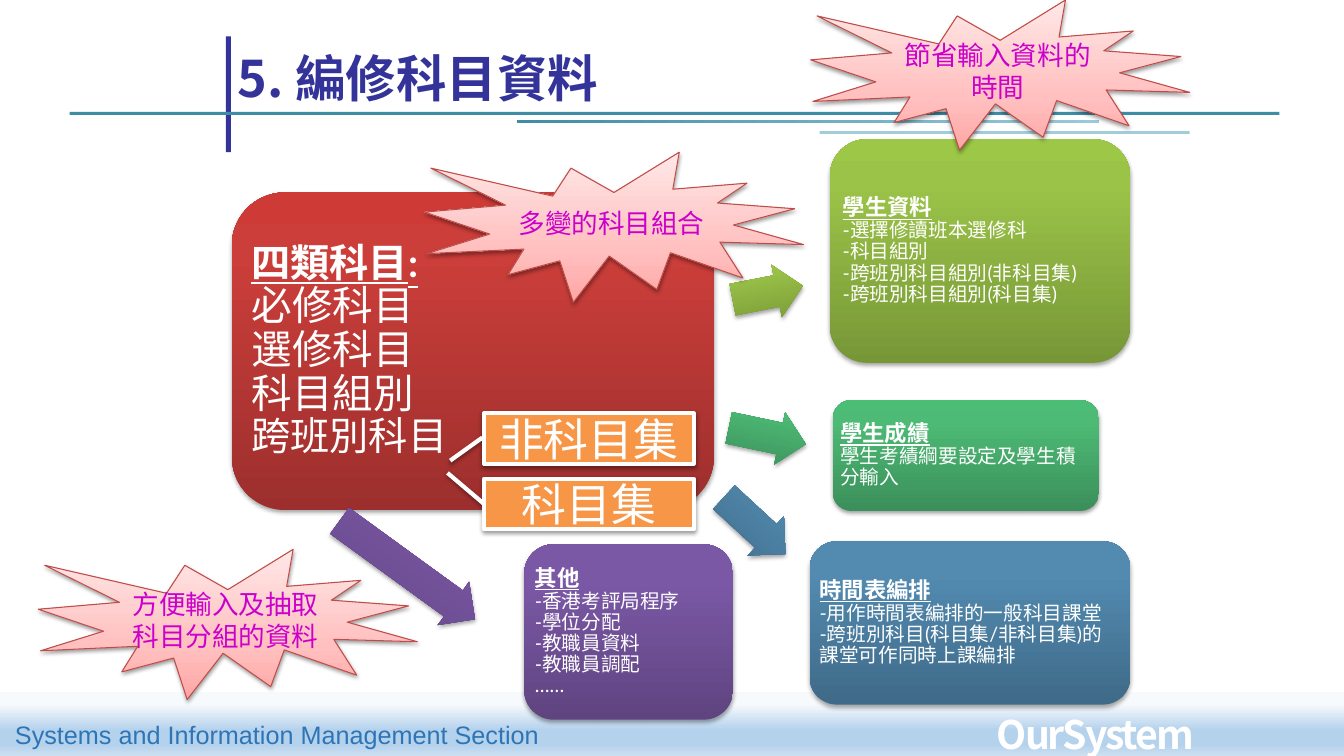
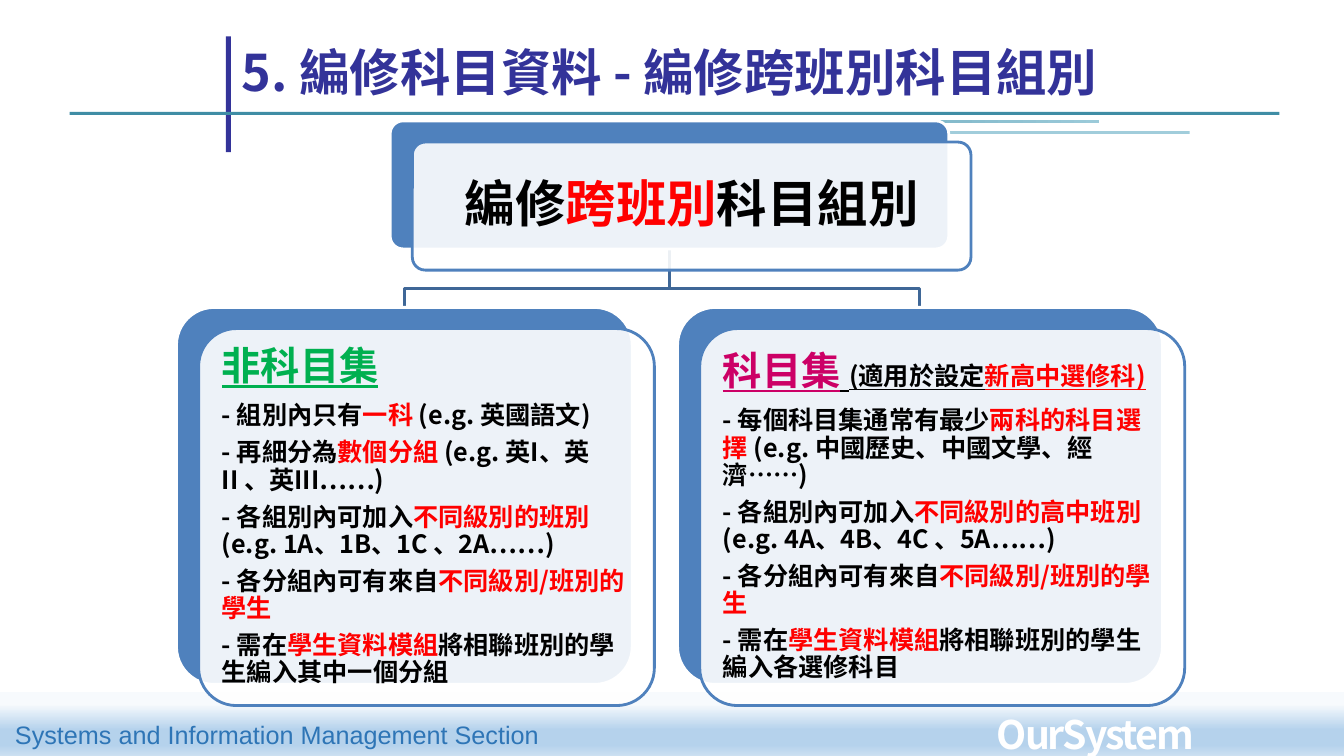
from dataclasses import dataclass
from typing import Any, NamedTuple

from lxml.etree import SubElement
from pptx import Presentation
from pptx.dml.color import RGBColor
from pptx.enum.shapes import MSO_SHAPE
from pptx.enum.text import MSO_ANCHOR, MSO_AUTO_SIZE, PP_ALIGN
from pptx.oxml.ns import qn
from pptx.util import Inches, Pt

RECT = MSO_SHAPE.RECTANGLE
ROUND = MSO_SHAPE.ROUNDED_RECTANGLE
ARROW = MSO_SHAPE.RIGHT_ARROW
CALLOUT = MSO_SHAPE.LINE_CALLOUT_1
SEAL = MSO_SHAPE.EXPLOSION1
LEFT, CENTER = PP_ALIGN.LEFT, PP_ALIGN.CENTER
TOP, MIDDLE, BOTTOM = MSO_ANCHOR.TOP, MSO_ANCHOR.MIDDLE, MSO_ANCHOR.BOTTOM
NO_FIT = MSO_AUTO_SIZE.NONE

LATO, CJK_TC, CJK_SC = "Lato", "Noto Sans CJK TC", "Noto Sans CJK SC"
WHITE, BLACK, RED = "FFFFFF", "000000", "FF0000"
NAVY, TEAL, BLUE, MAGENTA = "333399", "3F8DA5", "4F81BD", "CC00CC"


class Box(NamedTuple):
    left: float
    top: float
    width: float
    height: float

    def lengths(self) -> list[int]:
        return [Inches(value) for value in self]


class Gradient(NamedTuple):
    stops: tuple[tuple[int, str], ...]
    angle: int = 270


class Shadow(NamedTuple):
    alpha: int
    distance: float


class Run(NamedTuple):
    text: str
    size: float
    color: str = WHITE
    bold: bool = False
    underline: bool = False
    font: str = LATO


class Line(NamedTuple):
    runs: list[Run]
    after: float = 0


@dataclass
class Topic:
    box: Box
    gradient: Gradient
    lines: list[Line]
    arrow: Box
    rotation: float


@dataclass
class Panel:
    box: Box
    lines: list[Line]
    inset: float
    align: Any = LEFT


def shade(dark: str, mid: str, light: str) -> Gradient:
    return Gradient(((0, dark), (80, mid), (100, light)))


FOOTER_FILL = Gradient(((18, "F7FAFD"), (58, "B5D2EC"), (81, "B5D2EC"), (100, "CEE1F2")), 90)
RULE_FILL = Gradient(((0, TEAL), (100, "9BCAD9")), 0)
SEAL_FILL = Gradient(((0, "FFA6A5"), (35, "FFC0BF"), (100, "FFE7E7")))
CARD_SHADOW, NOTE_SHADOW = Shadow(35, 1.8), Shadow(38, 1.6)

DECORATION = [
    (Box(0, 6.87, 13.33, 0.64), FOOTER_FILL),
    (Box(2.24, 0.36, 0.05, 1.15), NAVY),
    (Box(0.69, 1.11, 12, 0.03), TEAL),
    (Box(5.13, 1.19, 5.77, 0.03), RULE_FILL),
    (Box(8.13, 1.3, 3.67, 0.03), "A1CDDB"),
]


def topic_lines(heading: str, *items: str) -> list[Line]:
    return [Line([Run(heading, 16, bold=True, underline=True)])] + [
        Line([Run(item, 14)]) for item in items
    ]


SUBJECT_LINES = [Line([Run("四類科目:", 28, bold=True, underline=True)])] + [
    Line([Run(text, size)])
    for text, size in (("必修科目", 29), ("選修科目", 29), ("科目組別", 29), ("跨班別科目", 28))
]

TOPICS = [
    Topic(
        Box(8.23, 1.38, 2.98, 2.22), shade("779737", "9BC348", "9DC746"),
        topic_lines("學生資料", "-選擇修讀班本選修科", "-科目組別",
                    "-跨班別科目組別(非科目集)", "-跨班別科目組別(科目集)"),
        Box(7.26, 2.64, 0.71, 0.53), 348.9,
    ),
    Topic(
        Box(8.26, 3.97, 2.64, 1.1), shade("3B8F5A", "4DBA75", "4BBD75"),
        topic_lines("學生成績", "學生考績綱要設定及學生積分輸入"),
        Box(7.22, 4.06, 0.78, 0.53), 11.9,
    ),
    Topic(
        Box(8.03, 5.37, 3.18, 1.62), shade("3F6A88", "528AB0", "518BB3"),
        topic_lines("時間表編排", "-用作時間表編排的一般科目課堂",
                    "-跨班別科目(科目集/非科目集)的課堂可作同時上課編排"),
        Box(7.07, 4.95, 0.83, 0.53), 42.7,
    ),
    Topic(
        Box(5.2, 5.4, 2.07, 1.74), shade("5F4480", "7B58A6", "7C57A8"),
        topic_lines("其他", "-香港考評局程序", "-學位分配", "-教職員資料", "-教職員調配", "……"),
        Box(3.21, 5.39, 1.66, 0.53), 36,
    ),
]

CALLOUTS = [
    ("科目集", 4.75, (0.502, 0.001, -0.116, -0.174)),
    ("非科目集", 4.1, (0.484, -0.008, 0.94, -0.161)),
]
SEALS = [
    ("多變的科目組合", 4.21, 1.51),
    ("節省輸入資料的時間", 8.04, 0),
    ("方便輸入及抽取科目分組的資料", 0.38, 5.45),
]


def point(before: str, stress: str, after: str = "") -> Line:
    parts = ((before, BLACK), (stress, RED), (after, BLACK))
    return Line([Run(text, 18, color, True, font=CJK_TC) for text, color in parts if text], 7)


SHARED_POINT = point("- 各分組內可有來自", "不同級別/班別的學生")
PANELS = [
    Panel(
        Box(3.87, 1.2, 5.54, 1.27),
        [Line([Run("編修", 36, BLACK, True), Run("跨班別", 36, RED, True),
               Run("科目組別", 36, BLACK, True)])],
        0.15, CENTER,
    ),
    Panel(
        Box(1.75, 3.05, 4.52, 3.74),
        [
            Line([Run("非科目集", 28, "00B050", True, True, CJK_TC)], 10),
            point("- 組別內只有", "一科 ", "(e.g. 英國語文)"),
            point("- 再細分為", "數個分組 ", "(e.g. 英I、英II 、英III……)"),
            point("- 各組別內可加入", "不同級別的班別 ", "(e.g. 1A、1B、1C 、2A……)"),
            SHARED_POINT,
            point("- 需在", "學生資料模組", "將相聯班別的學生編入其中一個分組"),
        ],
        0.12,
    ),
    Panel(
        Box(6.72, 3.05, 4.81, 3.74),
        [
            Line([Run("科目集", 28, "CC0066", True, True, CJK_TC),
                  Run(" ", 28, BLACK, True, True, CJK_TC),
                  Run("(適用於設定", 18, BLACK, True, True, CJK_TC),
                  Run("新高中選修科)", 18, RED, True, True, CJK_TC)], 10),
            point("- 每個科目集通常有最少", "兩科的科目選擇 ", "(e.g. 中國歷史、中國文學、經濟……)"),
            point("- 各組別內可加入", "不同級別的高中班別", "(e.g. 4A、4B、4C 、5A……)"),
            SHARED_POINT,
            point("- 需在", "學生資料模組", "將相聯班別的學生編入各選修科目"),
        ],
        0.12,
    ),
]


def rgb(value: str) -> RGBColor:
    return RGBColor.from_string(value)


def apply_format(target: Any, values: dict[str, Any]) -> None:
    for name, value in values.items():
        setattr(target, name, value)


def paint(shape: Any, fill: str | Gradient, opacity: int = 100) -> None:
    if isinstance(fill, Gradient):
        shape.fill.gradient()
        shape.fill.gradient_angle = (360 - fill.angle) % 360
        stop_list = shape._element.spPr.find(qn("a:gradFill")).find(qn("a:gsLst"))
        for stop in list(stop_list):
            stop_list.remove(stop)
        for position, color in fill.stops:
            stop = SubElement(stop_list, qn("a:gs"), pos=str(position * 1000))
            SubElement(stop, qn("a:srgbClr"), val=color)
        return
    shape.fill.solid()
    shape.fill.fore_color.rgb = rgb(fill)
    if opacity < 100:
        color = shape._element.spPr.find(qn("a:solidFill")).find(qn("a:srgbClr"))
        SubElement(color, qn("a:alpha"), val=str(opacity * 1000))


def cast_shadow(shape: Any, shadow: Shadow) -> None:
    effects = shape._element.spPr.find(qn("a:effectLst"))
    outer = SubElement(effects, qn("a:outerShdw"), blurRad=str(Pt(3.1)),
                       dist=str(Pt(shadow.distance)), dir="5400000", rotWithShape="0")
    color = SubElement(outer, qn("a:srgbClr"), val=BLACK)
    SubElement(color, qn("a:alpha"), val=str(shadow.alpha * 1000))


def draw(slide: Any, kind: Any, box: Box, fill: str | Gradient,
         border: tuple[str, float] | None = None, shadow: Shadow | None = None,
         adjust: tuple[float, ...] = (), opacity: int = 100) -> Any:
    shape = slide.shapes.add_shape(kind, *box.lengths())
    for index, value in enumerate(adjust):
        shape.adjustments[index] = value
    paint(shape, fill, opacity)
    if border:
        shape.line.color.rgb = rgb(border[0])
        shape.line.width = Pt(border[1])
    else:
        shape.line.fill.background()
    shape.shadow.inherit = False
    if shadow:
        cast_shadow(shape, shadow)
    return shape


def write(shape: Any, lines: list[Line], inset: tuple[float, float] = (0.1, 0.05),
          align: Any = LEFT, anchor: Any = MIDDLE, spacing: float = 1.0,
          wrap: bool = True) -> None:
    frame = shape.text_frame
    across, down = (Inches(value) for value in inset)
    apply_format(frame, {
        "word_wrap": wrap, "auto_size": NO_FIT, "vertical_anchor": anchor,
        "margin_left": across, "margin_right": across,
        "margin_top": down, "margin_bottom": down,
    })
    for index, line in enumerate(lines):
        paragraph = frame.add_paragraph() if index else frame.paragraphs[0]
        apply_format(paragraph, {
            "alignment": align, "line_spacing": spacing,
            "space_before": Pt(0), "space_after": Pt(line.after),
        })
        for item in line.runs:
            run = paragraph.add_run()
            run.text = item.text
            apply_format(run.font, {
                "size": Pt(item.size), "bold": item.bold,
                "underline": item.underline, "name": item.font,
            })
            run.font.color.rgb = rgb(item.color)
            east_asian = CJK_TC if item.font == LATO else item.font
            properties = run._r.get_or_add_rPr()
            SubElement(properties, qn("a:ea"), typeface=east_asian)


def start_slide(deck: Any, title: str, title_box: Box) -> Any:
    slide = deck.slides.add_slide(deck.slide_layouts[5])
    for box, fill in DECORATION:
        draw(slide, RECT, box, fill)
    section = slide.shapes.add_textbox(*Box(0.05, 7.09, 5.45, 0.4).lengths())
    write(section, [Line([Run("Systems and Information Management Section", 18, "2E75B6",
                              font="Arial")])], anchor=TOP, wrap=False)
    system = slide.shapes.add_textbox(*Box(9.79, 7, 2.73, 0.57).lengths())
    write(system, [Line([Run("OurSystem", 28, bold=True, font=CJK_SC)])], anchor=TOP)
    system.text_frame.paragraphs[0].runs[0]._r.get_or_add_rPr().set("spc", "-150")
    heading = slide.shapes.title
    apply_format(heading, dict(zip(("left", "top", "width", "height"), title_box.lengths())))
    write(heading, [Line([Run(title, 36, NAVY, True, font=CJK_TC)])], anchor=BOTTOM)
    return slide


def build_overview(deck: Any) -> None:
    slide = start_slide(deck, "5. 編修科目資料", Box(2.26, 0.29, 10.44, 0.83))
    subjects = draw(slide, ROUND, Box(2.3, 1.91, 4.78, 3.15),
                    shade("9C2F2D", "CB3E3A", "CE3B37"), shadow=CARD_SHADOW)
    write(subjects, SUBJECT_LINES, (0.04, 0.04), spacing=0.9)
    for topic in TOPICS:
        arrow = draw(slide, ARROW, topic.arrow, topic.gradient, shadow=CARD_SHADOW,
                     adjust=(0.6, 0.5))
        arrow.rotation = topic.rotation
        card = draw(slide, ROUND, topic.box, topic.gradient, shadow=CARD_SHADOW)
        write(card, topic.lines, (0.02, 0.02), spacing=0.9)
    for text, top, adjust in CALLOUTS:
        callout = draw(slide, CALLOUT, Box(4.8, top, 2.08, 0.5), "F79646", (WHITE, 3),
                       NOTE_SHADOW, adjust)
        write(callout, [Line([Run(text, 32, font=CJK_SC)])], align=CENTER)
    for text, left, top in SEALS:
        seal = draw(slide, SEAL, Box(left, top, 3.76, 1.49), SEAL_FILL, ("BF4C48", 0.75),
                    NOTE_SHADOW)
        write(seal, [Line([Run(text, 19, MAGENTA, font=CJK_SC)])], align=CENTER)


def build_groups(deck: Any) -> None:
    slide = start_slide(deck, "5. 編修科目資料 - 編修跨班別科目組別", Box(2.3, 0.23, 9.84, 0.83))
    for end in (9.12, 4.01):
        builder = slide.shapes.build_freeform(Inches(6.64), Inches(2.47))
        bends = ((6.64, 2.86), (end, 2.86), (end, 3.05))
        builder.add_line_segments([(Inches(x), Inches(y)) for x, y in bends], close=False)
        branch = builder.convert_to_shape()
        branch.fill.background()
        branch.line.color.rgb = rgb("3F6797")
        branch.line.width = Pt(2)
        branch.shadow.inherit = False
    for panel in PANELS:
        draw(slide, ROUND, panel.box, BLUE, (WHITE, 2), adjust=(0.1,))
        left, top, width, height = panel.box
        front = draw(slide, ROUND, Box(left + 0.22, top + 0.21, width, height), WHITE,
                     (BLUE, 2), adjust=(0.1,), opacity=90)
        write(front, panel.lines, (panel.inset, panel.inset), panel.align, spacing=0.9)


def main() -> None:
    deck = Presentation()
    deck.slide_width, deck.slide_height = Inches(13.33), Inches(7.5)
    build_overview(deck)
    build_groups(deck)
    deck.save("out.pptx")


if __name__ == "__main__":
    main()
